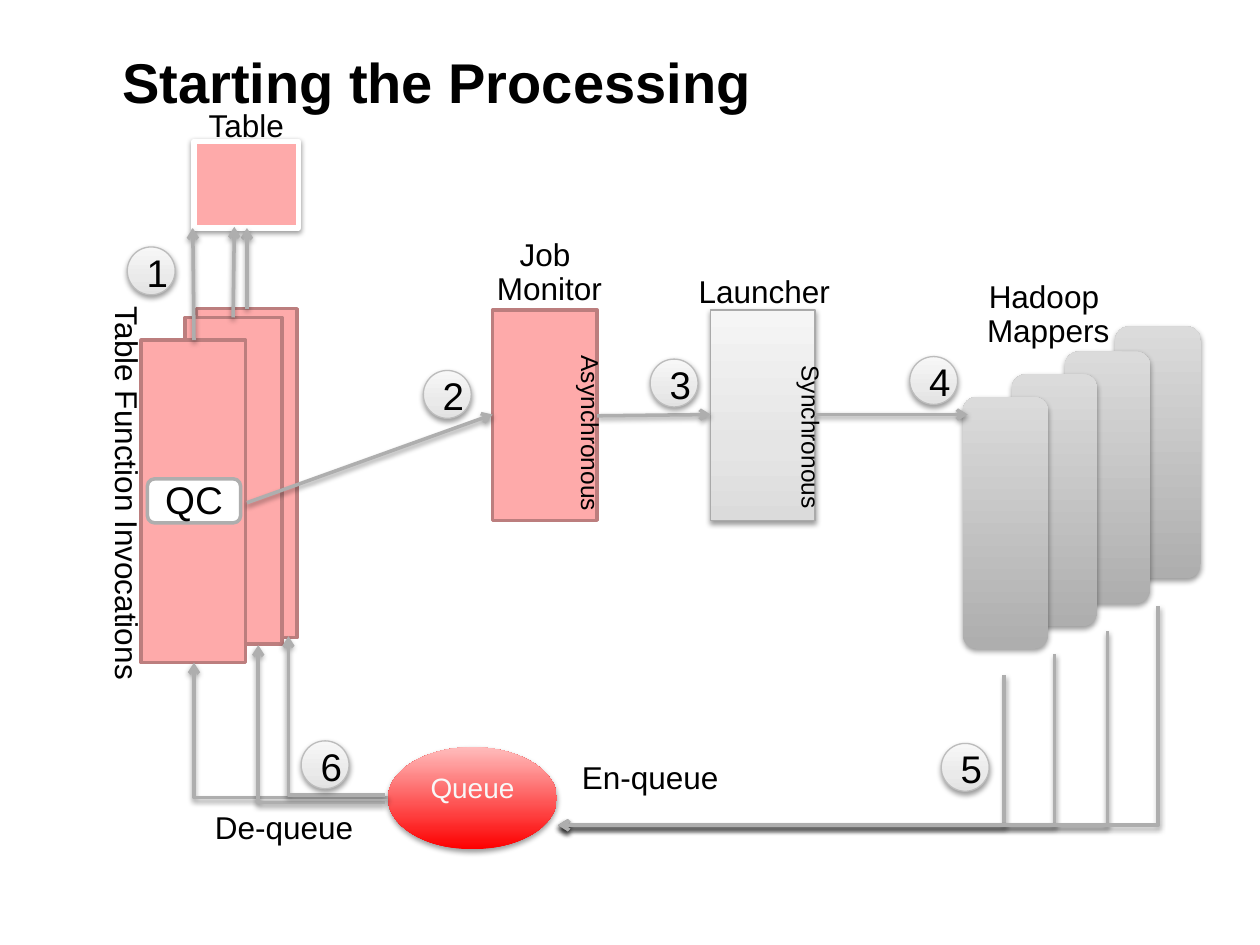
from typing import NamedTuple

import pptx
import pptx.dml.color
import pptx.enum.shapes
import pptx.enum.text
import pptx.oxml.ns
import pptx.util
from lxml import etree

Inches = pptx.util.Inches
Pt = pptx.util.Pt
Kind = pptx.enum.shapes.MSO_SHAPE
Link = pptx.enum.shapes.MSO_CONNECTOR
Align = pptx.enum.text.PP_ALIGN
Anchor = pptx.enum.text.MSO_ANCHOR
qn = pptx.oxml.ns.qn

BLACK, WHITE, GREY = "000000", "FFFFFF", "AEAEAE"
PINK, ROSE = "FEAAAA", "BC7E7E"
RED = ((0, "FD0000"), (100, "FFBCBC"))
PALE = ((0, "E2E2E2"), (35, "EAEAEA"), (100, "F7F7F7"))
LIGHT = ((0, "DBDBDB"), (35, "E5E5E5"), (100, "F5F5F5"))
DARK = ((0, GREY), (100, "DBDBDB"))


class Box(NamedTuple):
    x: float
    y: float
    w: float
    h: float
    fill: str | tuple = PINK
    line: str | None = ROSE
    width: float = 2
    shade: bool = False
    kind: Kind = Kind.RECTANGLE
    text: str = ""
    size: int = 22
    ink: str = BLACK
    top: float = 0


class Label(NamedTuple):
    text: str
    x: float
    y: float
    w: float
    h: float
    size: int = 18
    turn: bool = False


class Arrow(NamedTuple):
    x1: float
    y1: float
    x2: float
    y2: float
    bent: bool = False
    end: str = "tailEnd"


def color(code: str) -> pptx.dml.color.RGBColor:
    return pptx.dml.color.RGBColor.from_string(code)


def add_shade(props, alpha: int = 38) -> None:
    effects = props.find(qn("a:effectLst"))
    if effects is None:
        effects = etree.SubElement(props, qn("a:effectLst"))
    outer = etree.SubElement(effects, qn("a:outerShdw"), blurRad=str(Pt(3.1)),
                             dist=str(Pt(1.6)), dir="5400000", rotWithShape="0")
    tint = etree.SubElement(outer, qn("a:srgbClr"), val=BLACK)
    etree.SubElement(tint, qn("a:alpha"), val=str(alpha * 1000))


def paint(shape, fill: str | tuple) -> None:
    if isinstance(fill, str):
        shape.fill.solid()
        shape.fill.fore_color.rgb = color(fill)
        return
    shape.fill.gradient()
    shape.fill.gradient_angle = 90
    stops = shape._element.spPr.find(qn("a:gradFill")).find(qn("a:gsLst"))
    for stop in list(stops):
        stops.remove(stop)
    for place, code in fill:
        stop = etree.SubElement(stops, qn("a:gs"), pos=str(place * 1000))
        etree.SubElement(stop, qn("a:srgbClr"), val=str(color(code)))


def write(frame, text: str, size: int, ink: str = BLACK) -> None:
    para = frame.paragraphs[0]
    para.text = text
    para.alignment = Align.CENTER
    para.line_spacing = 0.9
    para.space_before = Pt(0)
    for run in para.runs:
        run.font.name = "Arial"
        run.font.size = Pt(size)
        run.font.color.rgb = color(ink)


def draw_box(slide, box: Box) -> None:
    shape = slide.shapes.add_shape(box.kind, *map(Inches, box[:4]))
    shape.shadow.inherit = False
    paint(shape, box.fill)
    if box.line:
        shape.line.color.rgb = color(box.line)
        shape.line.width = Pt(box.width)
    else:
        shape.line.fill.background()
    if box.shade:
        add_shade(shape._element.spPr)
    if box.text:
        frame = shape.text_frame
        frame.vertical_anchor = Anchor.TOP
        frame.margin_top = Inches(box.top)
        props = frame.paragraphs[0]._p.get_or_add_pPr()
        props.set("marL", str(Inches(0.13)))
        props.set("indent", str(Inches(-0.13)))
        write(frame, box.text, box.size, box.ink)


def draw_label(slide, label: Label) -> None:
    spot = map(Inches, (label.x, label.y, label.w, label.h))
    frame = slide.shapes.add_textbox(*spot).text_frame
    frame.word_wrap = False
    if label.turn:
        frame._txBody.bodyPr.set("vert", "vert")
    write(frame, label.text, label.size)


def draw_arrow(slide, arrow: Arrow) -> None:
    kind = Link.ELBOW if arrow.bent else Link.STRAIGHT
    link = slide.shapes.add_connector(kind, *map(Inches, arrow[:4]))
    props = link._element.spPr
    if arrow.bent:
        props.find(qn("a:prstGeom")).set("prst", "bentConnector2")
    link.line.color.rgb = color(GREY)
    link.line.width = Pt(2)
    etree.SubElement(props.find(qn("a:ln")), qn(f"a:{arrow.end}"), type="arrow")
    add_shade(props)


def badge(text: str, x: float, y: float) -> Box:
    return Box(x, y, 0.38, 0.38, PALE, "BCBCBC", 0.75, True, Kind.OVAL, text)


def mapper(x: float, y: float) -> Box:
    return Box(x, y, 0.68, 2, DARK, None, 0, True, Kind.ROUNDED_RECTANGLE)


BOXES = [
    Box(3.08, 5.93, 1.34, 0.81, RED, None, 0, True, Kind.OVAL,
        "Queue", 16, "F8F8F8", 0.1),
    Box(1.56, 2.45, 0.8, 2.61),
    Box(1.47, 2.52, 0.77, 2.59),
    Box(1.12, 2.7, 0.83, 2.56),
    Box(1.54, 1.12, 0.83, 0.69, PINK, WHITE, 3, True),
    Box(3.91, 2.46, 0.83, 1.67),
    Box(5.64, 2.46, 0.83, 1.67, LIGHT, "AAAAAA", 0.75, True),
    mapper(8.85, 2.59), mapper(8.45, 2.79),
    mapper(8.03, 2.97), mapper(7.64, 3.15),
]
ARROWS = [
    Arrow(1.96, 2.45, 1.96, 1.81),
    Arrow(1.85, 2.52, 1.86, 1.8),
    Arrow(1.54, 2.7, 1.53, 1.81),
    Arrow(1.96, 3.99, 3.91, 3.29),
    Arrow(4.74, 3.3, 5.64, 3.29),
    Arrow(6.47, 3.29, 7.68, 3.29),
    *(Arrow(4.43, 6.55, x, y, True, "headEnd")
      for x, y in ((7.97, 5.36), (8.37, 5.19), (8.79, 5.01), (9.19, 4.81))),
    Arrow(3.08, 6.33, 1.54, 5.26, True),
    Arrow(3.06, 6.37, 2.05, 5.12, True),
    Arrow(3.06, 6.31, 2.29, 5.05, True),
]
MARKS = [
    badge("1", 1.01, 1.96), badge("2", 3.36, 2.94), badge("3", 5.16, 2.85),
    badge("4", 7.22, 2.83), badge("5", 7.47, 5.9), badge("6", 2.39, 5.88),
    Box(1.17, 3.8, 0.74, 0.35, WHITE, GREY, 2, False,
        Kind.ROUNDED_RECTANGLE, "QC"),
]
LABELS = [
    Label("Table", 1.55, 0.83, 0.81, 0.37),
    Label("Table Function Invocations", 0.71, 2.37, 0.47, 3.09, turn=True),
    Label("Job \vMonitor", 3.84, 1.85, 1.04, 0.65),
    Label("Asynchronous", 4.42, 2.77, 0.41, 1.34, 14, True),
    Label("Launcher", 5.44, 2.14, 1.25, 0.37),
    Label("Synchronous", 6.17, 2.85, 0.41, 1.24, 14, True),
    Label("Hadoop \vMappers", 7.73, 2.18, 1.18, 0.65),
    Label("En-queue", 4.51, 6, 1.3, 0.37),
    Label("De-queue", 1.6, 6.4, 1.31, 0.37),
]


def set_title(slide) -> None:
    title = slide.shapes.title
    title.left, title.top = Inches(0.97), Inches(0.33)
    title.width, title.height = Inches(8.29), Inches(1.03)
    frame = title.text_frame
    frame.text = "Starting the Processing"
    frame.vertical_anchor = Anchor.TOP
    frame.margin_left = frame.margin_right = frame.margin_bottom = 0
    frame.margin_top = Inches(0.05)
    para = frame.paragraphs[0]
    para.alignment = Align.LEFT
    font = para.runs[0].font
    font.name, font.size, font.bold = "Arial", Pt(32), True
    font.color.rgb = color(BLACK)


def main() -> None:
    deck = pptx.Presentation()
    deck.slide_width, deck.slide_height = Inches(10), Inches(7.5)
    slide = deck.slides.add_slide(deck.slide_layouts[5])
    set_title(slide)
    for box in BOXES:
        draw_box(slide, box)
    for arrow in ARROWS:
        draw_arrow(slide, arrow)
    for mark in MARKS:
        draw_box(slide, mark)
    for label in LABELS:
        draw_label(slide, label)
    deck.save("out.pptx")


if __name__ == "__main__":
    main()
